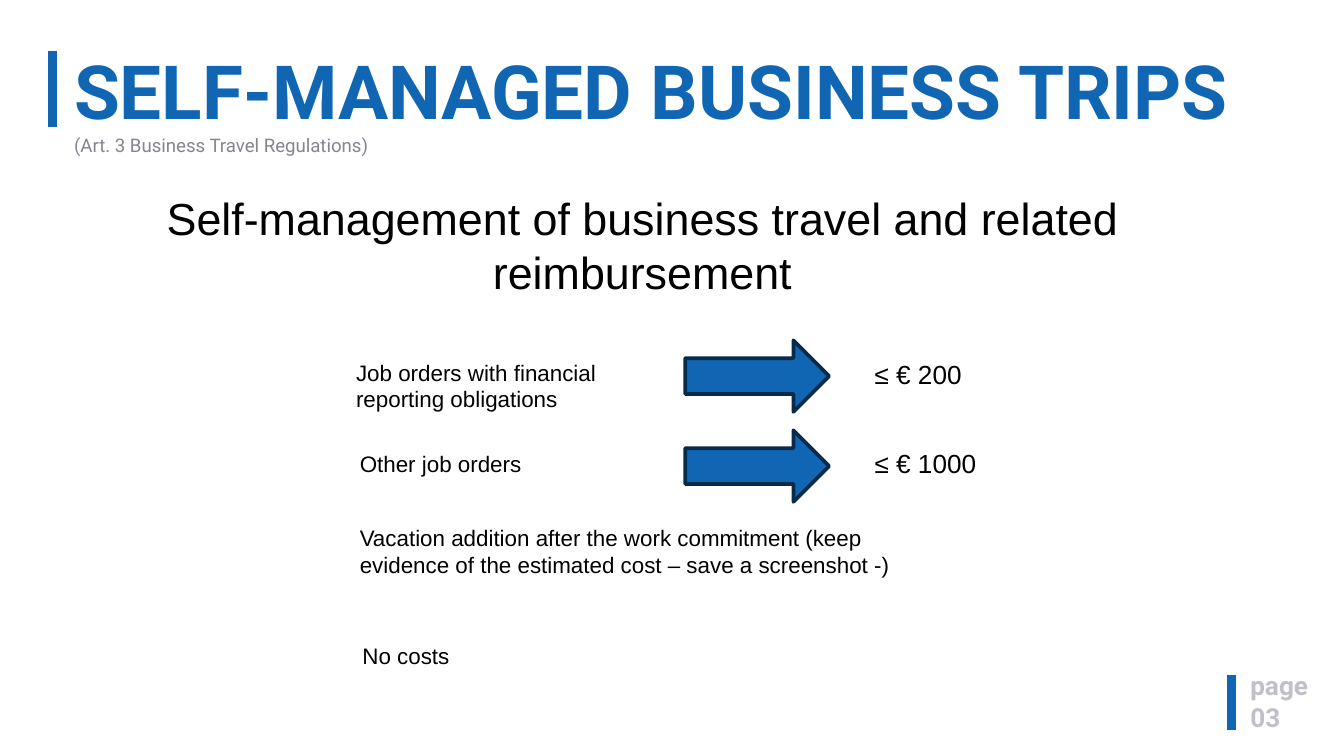
"""Build the slide on self-managed business trips."""
import pptx
import pptx.dml.color
import pptx.enum.shapes
import pptx.enum.text
import pptx.oxml
import pptx.util
from pptx.util import Cm

BLUE = pptx.dml.color.RGBColor(0x11, 0x66, 0xB3)
NAVY = pptx.dml.color.RGBColor(0x07, 0x2B, 0x4B)
GREY = pptx.dml.color.RGBColor(0x85, 0x85, 0x91)
SILVER = pptx.dml.color.RGBColor(0xC0, 0xC0, 0xC8)
BLACK = pptx.dml.color.RGBColor(0, 0, 0)
ALIGN = pptx.enum.text.PP_ALIGN
ANCHOR = pptx.enum.text.MSO_ANCHOR


class TripSlide:
    """Hold the style and the current slide."""

    tight = {"margin_left": Cm(0.13), "margin_right": Cm(0.13),
             "margin_top": Cm(0.05), "margin_bottom": Cm(0.05)}
    heading = {"name": "Roboto", "size": 40, "color": BLUE, "bold": True}
    source = {"name": "Roboto", "size": 10, "color": GREY, "bold": False}
    page = {"name": "Roboto", "size": 14, "color": SILVER, "bold": True}
    topic = {"name": "Arial", "size": 24, "color": BLACK}
    label = {"name": "Arial", "size": 12, "color": BLACK}
    limit = {"name": "Arial", "size": 14, "color": BLACK}

    def __init__(self, deck):
        """Add a title-only slide to the deck."""
        self.slide = deck.slides.add_slide(deck.slide_layouts[5])

    def apply(self, target, values):
        """Set attributes from a dict of format values."""
        for key, value in values.items():
            setattr(target, key, value)

    def style(self, font, look):
        """Format a font, with its size in points and its colour."""
        values = dict(look)
        font.color.rgb = values.pop("color")
        values["size"] = pptx.util.Pt(values["size"])
        self.apply(font, values)

    def title(self, place, heading, source):
        """Fill the title placeholder with a heading and its source."""
        holder = self.slide.shapes.title
        self.apply(holder, dict(zip(("left", "top", "width", "height"), map(Cm, place))))
        frame = holder.text_frame
        self.apply(frame, {**self.tight, "word_wrap": True,
                           "auto_size": pptx.enum.text.MSO_AUTO_SIZE.NONE,
                           "vertical_anchor": ANCHOR.MIDDLE})
        line = frame.paragraphs[0]
        self.apply(line, {"alignment": ALIGN.LEFT, "line_spacing": 0.9})
        for words, look in ((heading, self.heading), (source, self.source)):
            if line.runs:
                line.add_line_break()
            run = line.add_run()
            run.text = words
            self.style(run.font, look)

    def text(self, place, words, look, align=ALIGN.LEFT, margins=None):
        """Add a wrapped text box with one paragraph per line."""
        frame = self.slide.shapes.add_textbox(*map(Cm, place)).text_frame
        self.apply(frame, {"word_wrap": True, **(margins or {})})
        frame.text = words
        for line in frame.paragraphs:
            line.alignment = align
            self.style(line.runs[0].font, look)

    def bar(self, x, top, bottom):
        """Add a vertical accent line."""
        accent = self.slide.shapes.add_connector(
            pptx.enum.shapes.MSO_CONNECTOR.STRAIGHT, Cm(x), Cm(top), Cm(x), Cm(bottom))
        accent.line.color.rgb = BLUE
        accent.line.width = pptx.util.Pt(5)
        accent._element.spPr.append(pptx.oxml.parse_xml(
            '<a:effectLst xmlns:a="http://schemas.openxmlformats.org/drawingml/2006/main"/>'))

    def arrow(self, place):
        """Add a block arrow pointing right."""
        pointer = self.slide.shapes.add_shape(
            pptx.enum.shapes.MSO_SHAPE.RIGHT_ARROW, *map(Cm, place))
        pointer.shadow.inherit = False
        pointer.fill.solid()
        pointer.fill.fore_color.rgb = BLUE
        pointer.line.color.rgb = NAVY
        pointer.line.width = pptx.util.Pt(2)


def main():
    """Build and save the deck."""
    deck = pptx.Presentation()
    deck.slide_width, deck.slide_height = Cm(25.4), Cm(14.28)
    trips = TripSlide(deck)

    trips.bar(0.99, 0.97, 2.39)
    trips.bar(23.27, 12.75, 13.79)
    trips.title((1.27, 0.97, 22.4, 2.06), "SELF-MANAGED BUSINESS TRIPS",
                "(Art. 3 Business Travel Regulations)")
    trips.text((23.5, 12.6, 1.9, 1.32), "page\n03", trips.page, margins=trips.tight)
    trips.text((0, 3.48, 24.28, 3.33),
               "Self-management of business travel and related\nreimbursement",
               trips.topic, ALIGN.CENTER)

    for place, words in (
        ((6.48, 6.65, 6.1, 1.8), "Job orders with financial reporting obligations"),
        ((6.55, 8.38, 3.84, 0.76), "Other job orders"),
        ((6.55, 9.78, 11.5, 1.8), "Vacation addition after the work commitment "
         "(keep evidence of the estimated cost – save a screenshot -)"),
        ((6.6, 12.01, 11.5, 0.76), "No costs"),
    ):
        trips.text(place, words, trips.label)

    for arrow_top, limit_top, amount in ((6.43, 6.65, "≤ € 200"), (8.13, 8.33, "≤ € 1000")):
        trips.arrow((12.95, arrow_top, 2.72, 1.35))
        trips.text((16.28, limit_top, 2.6, 0.86), amount, trips.limit)

    deck.save("out.pptx")


if __name__ == "__main__":
    main()
